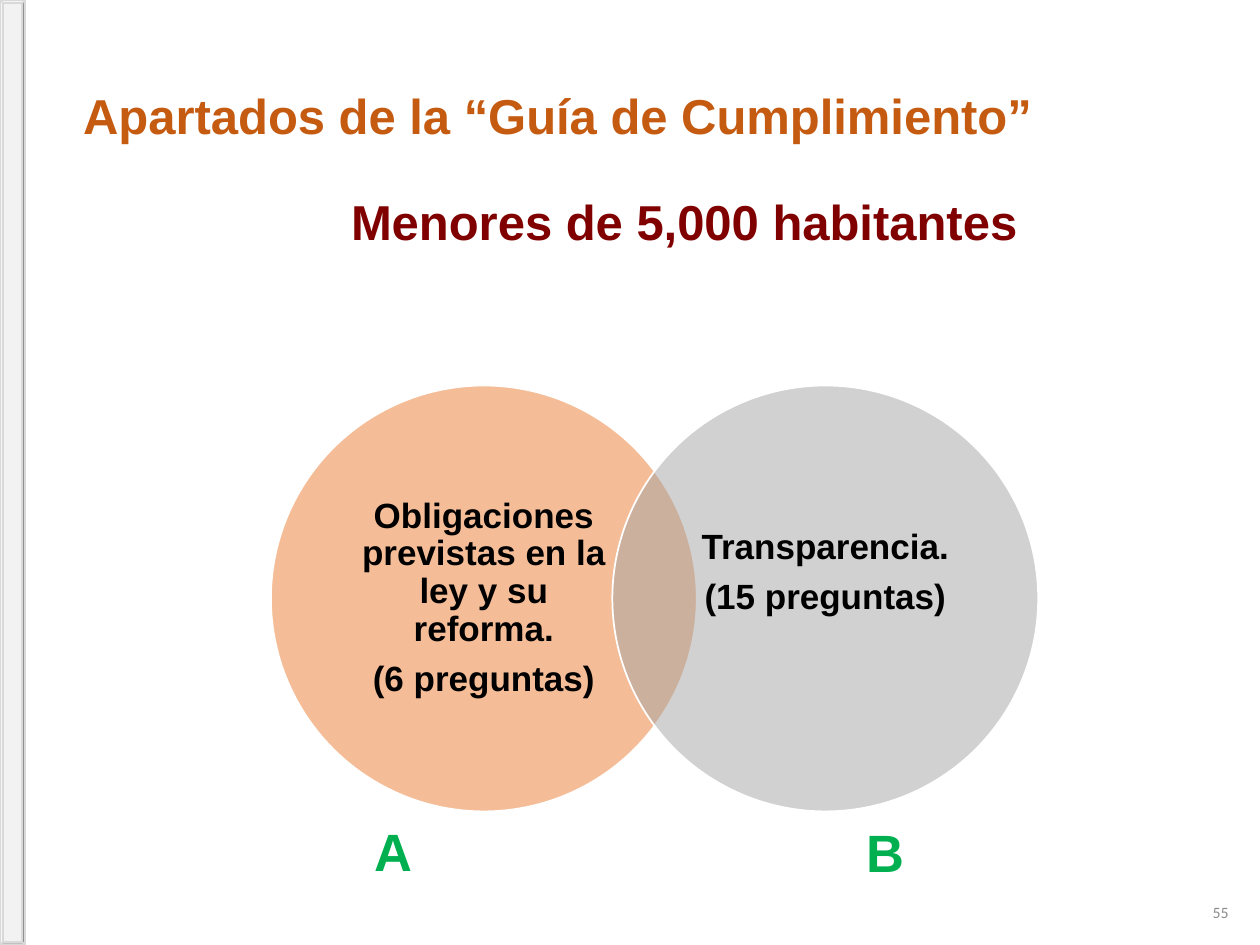
from pptx import Presentation
from pptx.dml.color import RGBColor
from pptx.enum.shapes import MSO_SHAPE
from pptx.enum.text import MSO_ANCHOR, PP_ALIGN
from pptx.oxml.ns import qn
from pptx.util import Inches, Pt
from lxml import etree

BEVEL, OVAL = MSO_SHAPE.BEVEL, MSO_SHAPE.OVAL
TOP, MIDDLE = MSO_ANCHOR.TOP, MSO_ANCHOR.MIDDLE
LEFT, CENTER, RIGHT = PP_ALIGN.LEFT, PP_ALIGN.CENTER, PP_ALIGN.RIGHT

COLORS = {
    "title": "C55A11", "subtitle": "800000", "letter": "00B050",
    "body": "000000", "page": "8C8C8C", "white": "FFFFFF",
    "bar": "F2F2F2", "bar_line": "D9D9D9",
    "orange": "ED7D31", "gray": "A5A5A5",
}

TITLE = "Apartados de la “Guía de Cumplimiento”"
SUBTITLE = "Menores de 5,000 habitantes"
PAGE_NUMBER = "55"
SECTIONS = [
    {"letter": "A", "letter_at": (2.87, 6.45), "color": "orange", "raise": 0,
     "lines": ["Obligaciones previstas en la ley y su reforma.", "(6 preguntas)"]},
    {"letter": "B", "letter_at": (6.78, 6.46), "color": "gray", "raise": 0.4,
     "lines": ["Transparencia.", "(15 preguntas)"]},
]
CIRCLE_LEFT, CIRCLE_TOP, DIAMETER, CIRCLE_STEP = 2.15, 3.06, 3.38, 2.71
LABEL_SIZE = 2.39
LABEL_MARGIN = (DIAMETER - LABEL_SIZE) / 2


def rgb(name):
    return RGBColor.from_string(COLORS[name])


def add_text(slide, box, lines, size, color, font="Arial", bold=True, align=LEFT,
             anchor=TOP, insets=(0.1, 0.05, 0.1, 0.05), spacing=1.0, after=0):
    frame = slide.shapes.add_textbox(*map(Inches, box)).text_frame
    frame.word_wrap = True
    frame.vertical_anchor = anchor
    (frame.margin_left, frame.margin_top,
     frame.margin_right, frame.margin_bottom) = map(Inches, insets)
    for index, line in enumerate(lines):
        paragraph = frame.add_paragraph() if index else frame.paragraphs[0]
        paragraph.alignment = align
        paragraph.line_spacing = spacing
        paragraph.space_after = Pt(after)
        run = paragraph.add_run()
        run.text = line
        run.font.name = font
        run.font.size = Pt(size)
        run.font.bold = bold
        run.font.color.rgb = rgb(color)


def add_panel(slide, preset, box, fill, line, opacity=100):
    panel = slide.shapes.add_shape(preset, *map(Inches, box))
    panel.shadow.inherit = False
    panel.fill.solid()
    panel.fill.fore_color.rgb = rgb(fill)
    panel.line.color.rgb = rgb(line)
    panel.line.width = Pt(1)
    if opacity < 100:
        color = panel.fill._xPr.find(qn("a:solidFill"))[0]
        etree.SubElement(color, qn("a:alpha")).set("val", str(opacity * 1000))


def add_section(slide, index, section):
    left = CIRCLE_LEFT + index * CIRCLE_STEP
    add_panel(slide, OVAL, (left, CIRCLE_TOP, DIAMETER, DIAMETER),
              section["color"], "white", opacity=50)
    add_text(slide,
             (left + LABEL_MARGIN, CIRCLE_TOP + LABEL_MARGIN, LABEL_SIZE, LABEL_SIZE),
             section["lines"], 20, "body", align=CENTER, anchor=MIDDLE,
             insets=(0.19, 0.03, 0.19, 0.03 + section["raise"]), spacing=0.9, after=7)
    add_text(slide, (*section["letter_at"], 1.45, 0.61),
             [section["letter"]], 30, "letter")


def main():
    deck = Presentation()
    deck.slide_width, deck.slide_height = Inches(10), Inches(7.5)
    slide = deck.slides.add_slide(deck.slide_layouts[6])
    add_panel(slide, BEVEL, (0, 0, 0.2, 7.5), "bar", "bar_line")
    add_text(slide, (9.39, 7.04, 0.46, 0.4), [PAGE_NUMBER], 9, "page",
             font="Calibri", bold=False, align=RIGHT, anchor=MIDDLE)
    for index, section in enumerate(SECTIONS):
        add_section(slide, index, section)
    add_text(slide, (0.43, 1.47, 10, 0.57), [SUBTITLE], 28, "subtitle", align=CENTER)
    add_text(slide, (0.43, 0.68, 7.99, 1.18), [TITLE], 28, "title",
             align=CENTER, spacing=0.9)
    deck.save("out.pptx")


if __name__ == "__main__":
    main()
